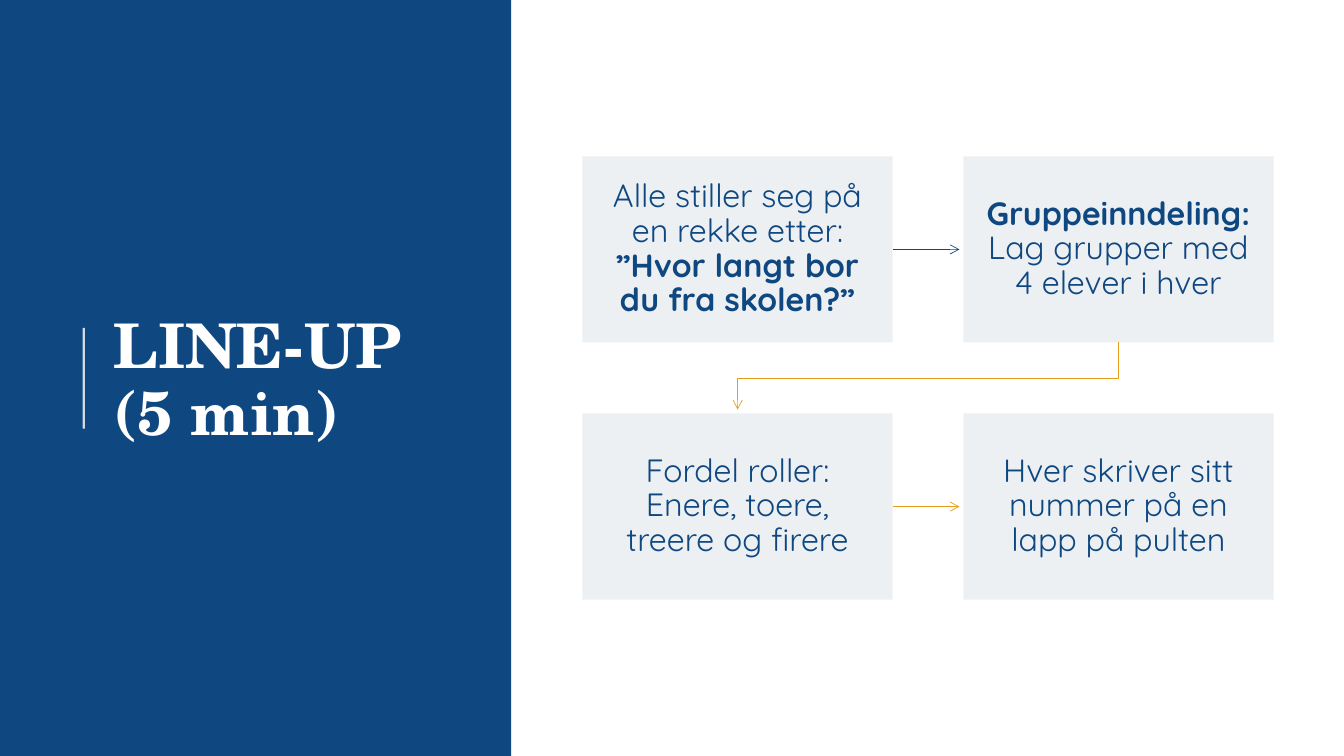
from pptx import Presentation
from pptx.dml.color import RGBColor
from pptx.enum.shapes import MSO_CONNECTOR, MSO_SHAPE
from pptx.enum.text import MSO_ANCHOR, PP_ALIGN
from pptx.oxml.ns import qn
from pptx.util import Cm, Pt
from lxml import etree

RECT, STRAIGHT = MSO_SHAPE.RECTANGLE, MSO_CONNECTOR.STRAIGHT
MIDDLE = MSO_ANCHOR.MIDDLE
LEFT, CENTER = PP_ALIGN.LEFT, PP_ALIGN.CENTER

SLIDE_W, SLIDE_H = 33.87, 19.05
PANEL_W = 12.98
STEP_LEFT, STEP_TOP, STEP_W, STEP_H = 14.68, 3.94, 7.82, 4.69
PITCH_X, PITCH_Y = 9.6, 6.48
ARROW_GAP = 0.1

STEPS = [
    [("Alle stiller seg på en rekke etter: ", False),
     ("”Hvor langt bor du fra skolen?”", True)],
    [("Gruppeinndeling:", True), (" Lag grupper med 4 elever i hver", False)],
    [("Fordel roller: Enere, toere, treere og firere", False)],
    [("Hver skriver sitt nummer på en lapp på pulten", False)],
]


def color(hex_text):
    return RGBColor.from_string(hex_text)


def write(frame, pieces, *, font, size, fill, align, margins):
    """Fill a frame with (text, bold) pieces; a newline is a line break."""
    frame.word_wrap = True
    frame.vertical_anchor = MIDDLE
    frame.margin_left = frame.margin_right = Cm(margins[0])
    frame.margin_top = frame.margin_bottom = Cm(margins[1])
    paragraph = frame.paragraphs[0]
    paragraph.alignment = align
    paragraph.line_spacing = 0.9
    for text, bold in pieces:
        for number, line in enumerate(text.split("\n")):
            if number:
                paragraph.add_line_break()
            run = paragraph.add_run()
            run.text = line
            run.font.name, run.font.size = font, Pt(size)
            run.font.bold = bold
            run.font.color.rgb = color(fill)
    paragraph.font.size = Pt(size)


class FlowSlide:
    BLUE, AMBER, PALE, WHITE = "0F4881", "E89C1A", "EDF0F3", "FFFFFF"
    HEADING, BODY = "TeX Gyre Schola", "Quicksand"

    def __init__(self, deck):
        self.slide = deck.slides.add_slide(deck.slide_layouts[5])
        self.shapes = self.slide.shapes

    def block(self, left, top, width, height, fill):
        block = self.shapes.add_shape(RECT, Cm(left), Cm(top), Cm(width), Cm(height))
        block.shadow.inherit = False
        block.fill.solid()
        block.fill.fore_color.rgb = color(fill)
        block.line.fill.background()
        return block

    def panel(self):
        """Draw the side panel behind the title placeholder."""
        panel = self.block(0, 0, PANEL_W - 0.1, SLIDE_H, self.BLUE)
        self.shapes._spTree.insert(2, panel._element)

    def title(self, text):
        title = self.shapes.title
        title.left, title.top, title.width, title.height = map(Cm, (2.62, 1.98, 9.37, 15.29))
        write(title.text_frame, [(text, True)], font=self.HEADING, size=44,
              fill=self.WHITE, align=LEFT, margins=(0.25, 0.13))

    def step(self, left, top, pieces):
        step = self.block(left, top, STEP_W, STEP_H, self.PALE)
        write(step.text_frame, pieces, font=self.BODY, size=23,
              fill=self.BLUE, align=CENTER, margins=(0.38, 0.41))

    def line(self, start, end, stroke, width=0.5):
        line = self.shapes.add_connector(STRAIGHT, *map(Cm, start + end))
        line.line.color.rgb = color(stroke)
        line.line.width = Pt(width)
        etree.SubElement(line._element.spPr, qn("a:effectLst"))
        return line

    def rule(self, x, top, bottom):
        rule = self.line((x, bottom), (x, top), self.WHITE, 1.5)
        tint = rule._element.spPr.find(".//" + qn("a:srgbClr"))
        etree.SubElement(tint, qn("a:alpha"), val="80000")

    def add_head(self, arrow):
        etree.SubElement(arrow.line._get_or_add_ln(), qn("a:tailEnd"), type="arrow")

    def arrow(self, start, end, stroke):
        self.add_head(self.line(start, end, stroke))

    def bent_arrow(self, points, stroke):
        corners = [(Cm(x), Cm(y)) for x, y in points]
        builder = self.shapes.build_freeform(*corners[0])
        builder.add_line_segments(corners[1:], close=False)
        bend = builder.convert_to_shape()
        bend.shadow.inherit = False
        bend.fill.background()
        bend.line.color.rgb = color(stroke)
        bend.line.width = Pt(0.5)
        self.add_head(bend)


def main():
    deck = Presentation()
    deck.slide_width, deck.slide_height = Cm(SLIDE_W), Cm(SLIDE_H)
    flow = FlowSlide(deck)
    flow.panel()
    flow.rule(2.11, 8.26, 10.8)
    flow.title("LINE-UP\n(5 min)")

    for number, pieces in enumerate(STEPS):
        row, column = divmod(number, 2)
        flow.step(STEP_LEFT + column * PITCH_X, STEP_TOP + row * PITCH_Y, pieces)

    for row, stroke in enumerate((flow.BLUE, flow.AMBER)):
        middle = STEP_TOP + row * PITCH_Y + STEP_H / 2
        flow.arrow((STEP_LEFT + STEP_W, middle),
                   (STEP_LEFT + PITCH_X - ARROW_GAP, middle), stroke)

    target_x = STEP_LEFT + STEP_W / 2
    source_x = target_x + PITCH_X
    source_y, target_y = STEP_TOP + STEP_H, STEP_TOP + PITCH_Y
    turn_y = (source_y + target_y) / 2
    flow.bent_arrow([(source_x, source_y), (source_x, turn_y), (target_x, turn_y),
                     (target_x, target_y - ARROW_GAP)], flow.AMBER)

    deck.save("out.pptx")


if __name__ == "__main__":
    main()
